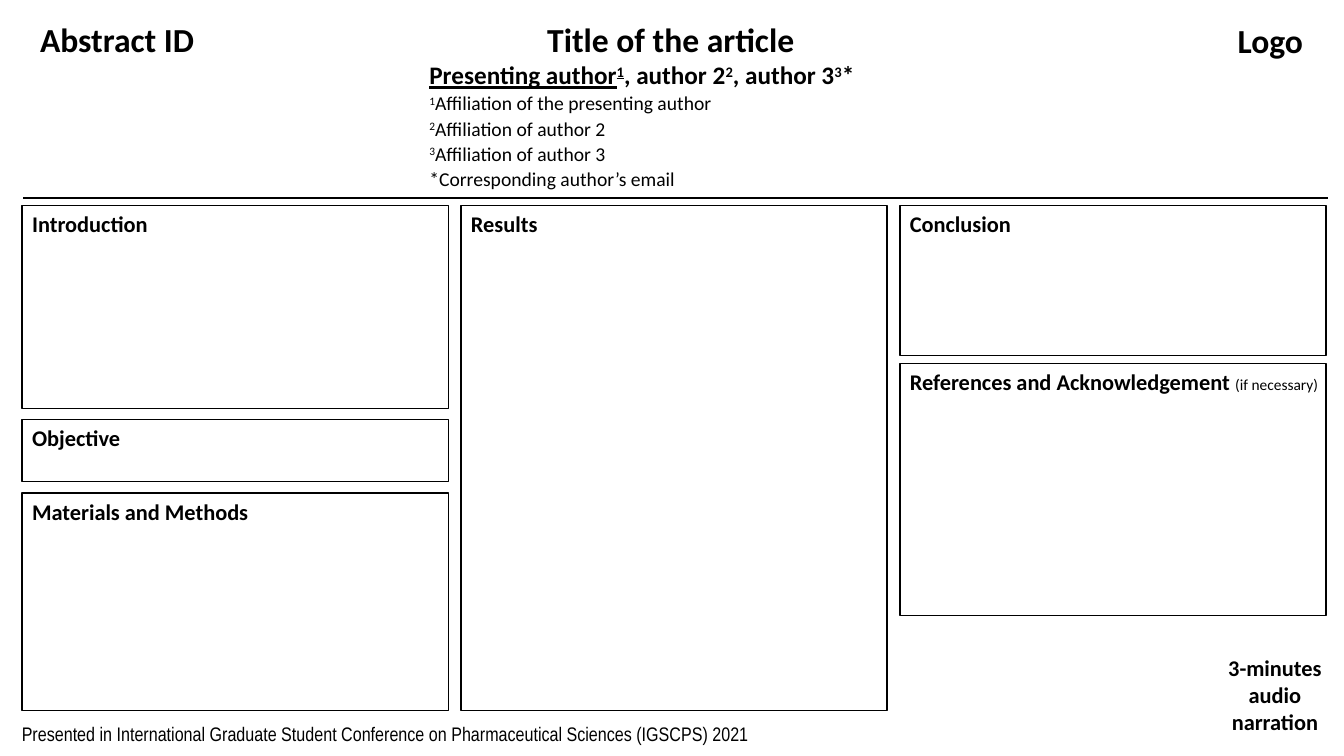
import pptx
import pptx.dml.color
import pptx.enum.shapes
import pptx.enum.text
import pptx.util
import lxml.etree
from pptx.util import Cm

COLOURS = {"ink": "000000", "paper": "FFFFFF"}

# Formats of the text spans
TITLE = {"size": 24, "bold": True}
HEADING = {"size": 16, "bold": True}
REMARK = {"size": 11}
AUTHOR = {"size": 18, "bold": True}
PRESENTER = {**AUTHOR, "underline": True}
AFFILIATION = {"size": 14}
FOOTER = {"size": 14, "name": "Arial Narrow"}
RAISED = {"baseline": "30000"}

# Header: each line is a list of (text, format, raised or not)
AUTHORS = [
    [("Presenting author", PRESENTER, False), ("1", PRESENTER, True),
     (", author 2", AUTHOR, False), ("2", AUTHOR, True),
     (", author 3", AUTHOR, False), ("3", AUTHOR, True), ("*", AUTHOR, False)],
    [("1", AFFILIATION, True), ("Affiliation of the presenting author", AFFILIATION, False)],
    [("2", AFFILIATION, True), ("Affiliation of author 2", AFFILIATION, False)],
    [("3", AFFILIATION, True), ("Affiliation of author 3", AFFILIATION, False)],
    [("*Corresponding author’s email", AFFILIATION, False)],
]

# Title row: text, left, top, width in cm
TITLES = [
    ("Abstract ID", 0.76, 0.36, 4.45),
    ("Title of the article", 13.54, 0.36, 6.81),
    ("Logo", 30.94, 0.38, 2.18),
]

# Poster columns: gap between panels, then (heading, remark, panel height, heading width)
COLUMNS = [
    (0.28, [("Introduction", "", 5.11, 3.48),
            ("Objective", "", 1.57, 2.77),
            ("Materials and Methods", "", 5.49, 6.02)]),
    (0, [("Results", "", 12.73, 2.21)]),
    (0.2, [("Conclusion", "", 3.78, 3.1),
           ("References and Acknowledgement ", "(if necessary)", 6.35, 11.76)]),
]
NARRATION = "3-minutes audio narration"
CONFERENCE = ("Presented in International Graduate Student Conference on "
              "Pharmaceutical Sciences (IGSCPS) 2021")

# Panel grid in cm
GRID_LEFT, GRID_TOP = 0.56, 5.18
PANEL_WIDTH, COLUMN_PITCH = 10.74, 11.06
HEADING_HEIGHT = 0.94

deck = pptx.Presentation()
deck.slide_width, deck.slide_height = Cm(33.87), Cm(19.05)
page = deck.slides.add_slide(deck.slide_layouts[6])


def colour(name):
    return pptx.dml.color.RGBColor.from_string(COLOURS[name])


def add_text(lines, left, top, width, height, wrap=False, **para_format):
    box = page.shapes.add_textbox(Cm(left), Cm(top), Cm(width), Cm(height))
    frame = box.text_frame
    frame.word_wrap = wrap
    frame.auto_size = pptx.enum.text.MSO_AUTO_SIZE.SHAPE_TO_FIT_TEXT
    for index, line in enumerate(lines):
        para = frame.add_paragraph() if index else frame.paragraphs[0]
        for key, value in para_format.items():
            setattr(para, key, value)
        for text, look, raised in line:
            span = para.add_run()
            span.text = text
            values = {"name": "Calibri", **look, "size": pptx.util.Pt(look["size"])}
            for key, value in values.items():
                setattr(span.font, key, value)
            span.font.color.rgb = colour("ink")
            if raised:
                span._r.get_or_add_rPr().attrib.update(RAISED)


def add_panel(left, top, height):
    panel = page.shapes.add_shape(pptx.enum.shapes.MSO_SHAPE.RECTANGLE,
                                  Cm(left), Cm(top), Cm(PANEL_WIDTH), Cm(height))
    panel.shadow.inherit = False
    panel.fill.solid()
    panel.fill.fore_color.rgb = colour("paper")
    panel.line.color.rgb = colour("ink")
    panel.line.width = pptx.util.Pt(1)


# Header
for text, left, top, width in TITLES:
    add_text([[(text, TITLE, False)]], left, top, width, 1.27)
add_text(AUTHORS, 10.57, 1.32, 15.06, 3.61, wrap=True, line_spacing=1.07)

# Rule under the header
rule = page.shapes.add_connector(pptx.enum.shapes.MSO_CONNECTOR.STRAIGHT,
                                 Cm(0.58), Cm(5), Cm(33.48), Cm(5))
rule.line.color.rgb = colour("ink")
rule.line.width = pptx.util.Pt(1.5)
lxml.etree.SubElement(rule._element.spPr, pptx.oxml.ns.qn("a:effectLst"))

# Panels with their headings
for number, (gap, panels) in enumerate(COLUMNS):
    left, top = GRID_LEFT + number * COLUMN_PITCH, GRID_TOP
    for heading, remark, height, heading_width in panels:
        add_panel(left, top, height)
        line = [(heading, HEADING, False)]
        if remark:
            line.append((remark, REMARK, False))
        add_text([line], left, top, heading_width, HEADING_HEIGHT, wrap=bool(remark))
        top += height + gap

# Foot of the poster
add_text([[(NARRATION, HEADING, False)]], 30.43, 16.36, 3.4, 2.31, wrap=True,
         alignment=pptx.enum.text.PP_ALIGN.CENTER)
add_text([[(CONFERENCE, FOOTER, False)]], 0.3, 18.06, 19.43, 0.86, wrap=True)

deck.save("out.pptx")
